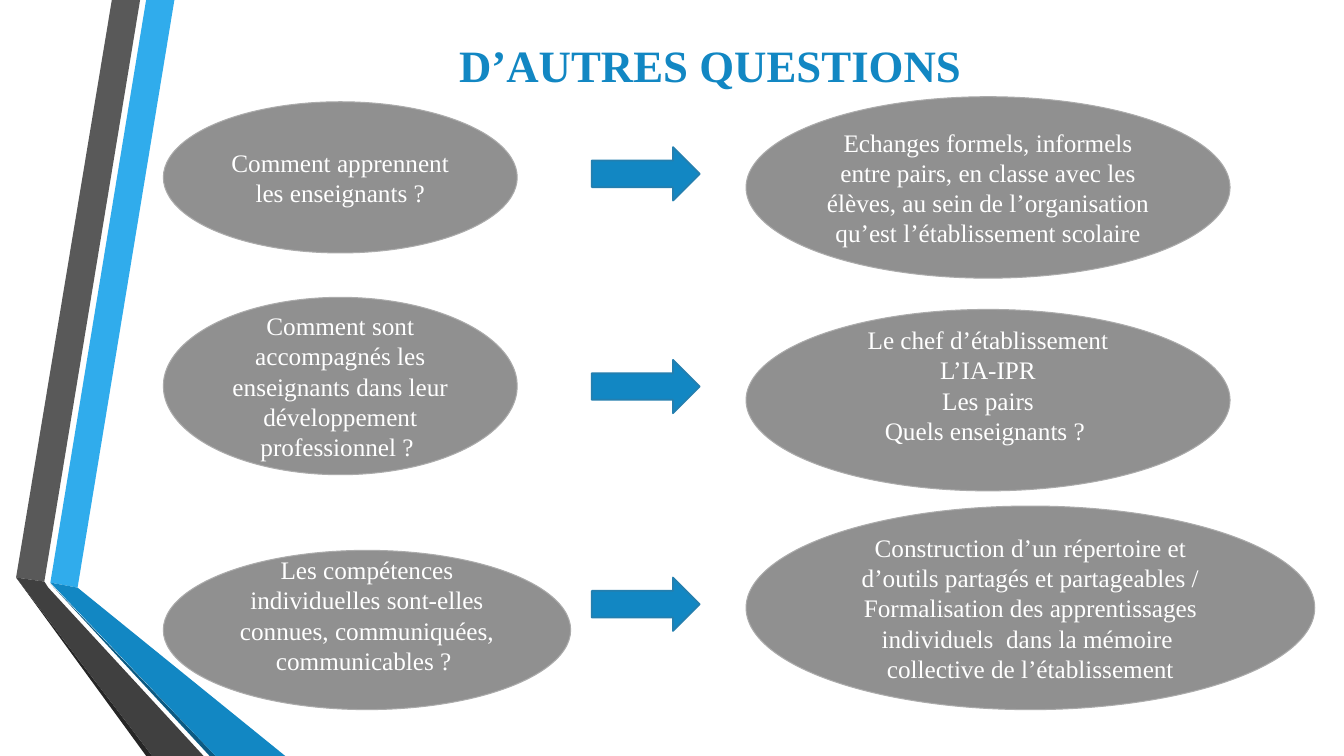
from pptx import Presentation
from pptx.dml.color import RGBColor
from pptx.enum.shapes import MSO_SHAPE
from pptx.enum.text import MSO_ANCHOR, PP_ALIGN
from pptx.util import Inches, Pt

WHITE = RGBColor(0xFF, 0xFF, 0xFF)
BLUE = RGBColor(0x12, 0x87, 0xC3)
BLUE_EDGE = RGBColor(0x24, 0x7F, 0xAF)
BLUE_LIGHT = RGBColor(0x30, 0xAC, 0xEC)
BLUE_DARK = RGBColor(0x0C, 0x5A, 0x82)
GREY = RGBColor(0x90, 0x90, 0x90)
GREY_EDGE = RGBColor(0xAB, 0xAB, 0xAB)
CHARCOAL = RGBColor(0x59, 0x59, 0x59)
CHARCOAL_DARK = RGBColor(0x40, 0x40, 0x40)
BLACK_SOFT = RGBColor(0x26, 0x26, 0x26)

TITLE_FONT = {"name": "Times New Roman", "size": Pt(32), "bold": True}
BODY_FONT = {"name": "Times New Roman", "size": Pt(18)}

# Ribbon down the left edge: colour and outline
RIBBON = [
    (BLUE_LIGHT, [(0.5, 5.78), (0.77, 5.83), (1.73, 0), (1.45, 0)]),
    (CHARCOAL, [(1.39, 0), (1.11, 0), (0.16, 5.73), (0.44, 5.77)]),
    (BLACK_SOFT, [(0.16, 5.73), (1.45, 7.5), (1.51, 7.5)]),
    (BLUE_DARK, [(0.5, 5.79), (2.08, 7.5), (2.14, 7.5)]),
    (BLUE, [(0.5, 5.78), (2.14, 7.5), (2.83, 7.5), (0.77, 5.83)]),
    (CHARCOAL_DARK, [(2.02, 7.5), (0.48, 5.83), (0.44, 5.77),
                     (0.16, 5.73), (1.51, 7.5)]),
]

LEFT_X, ARROW_X, RIGHT_X = 1.62, 5.87, 7.4

# Each row: question, arrow top, answer
# Ellipses: top, width, height, bottom inset, paragraphs
ROWS = [
    ((1.01, 3.51, 1.5, 0.05, ["Comment apprennent les enseignants ?"]),
     1.46,
     (0.96, 4.8, 1.8, 0.05,
      ["Echanges formels, informels entre pairs, en classe avec les élèves, "
       "au sein de l’organisation qu’est l’établissement scolaire"])),
    ((2.95, 3.51, 1.76, 0.05,
      ["Comment sont accompagnés les enseignants dans leur développement "
       "professionnel ? "]),
     3.57,
     (3.07, 4.8, 1.8, 0.35,
      ["Le chef d’établissement", "L’IA-IPR", "Les pairs",
       "Quels enseignants ? "])),
    ((5.46, 4.04, 1.58, 0.35,
      ["Les compétences individuelles sont-elles connues, communiquées, "
       "communicables ? "]),
     5.73,
     (5.02, 5.64, 2.02, 0.05,
      ["Construction d’un répertoire et d’outils partagés et partageables / "
       "Formalisation des apprentissages individuels  dans la mémoire ",
       "collective de l’établissement"])),
]


class SlideBuilder:
    def __init__(self, slide):
        self.shapes = slide.shapes

    def paint(self, sp, fill, edge=None, width=0):
        sp.shadow.inherit = False
        sp.fill.solid()
        sp.fill.fore_color.rgb = fill
        if edge is None:
            sp.line.fill.background()
        else:
            sp.line.color.rgb = edge
            sp.line.width = Pt(width)

    def set_text(self, sp, paragraphs, font, color, bottom=0.05):
        tf = sp.text_frame
        frame = {"word_wrap": True, "vertical_anchor": MSO_ANCHOR.MIDDLE,
                 "margin_bottom": Inches(bottom)}
        for key, value in frame.items():
            setattr(tf, key, value)
        for i, text in enumerate(paragraphs):
            p = tf.add_paragraph() if i else tf.paragraphs[0]
            p.alignment = PP_ALIGN.CENTER
            r = p.add_run()
            r.text = text
            for key, value in font.items():
                setattr(r.font, key, value)
            r.font.color.rgb = color

    def band(self, color, points):
        corners = [(Inches(x), Inches(y)) for x, y in points]
        outline = self.shapes.build_freeform(*corners[0])
        outline.add_line_segments(corners[1:], close=True)
        self.paint(outline.convert_to_shape(), color)

    def title(self, text, *box):
        sp = self.shapes.add_textbox(*map(Inches, box))
        self.set_text(sp, [text], TITLE_FONT, BLUE)

    def ellipse(self, left, top, width, height, bottom, paragraphs):
        box = map(Inches, (left, top, width, height))
        sp = self.shapes.add_shape(MSO_SHAPE.OVAL, *box)
        self.paint(sp, GREY, GREY_EDGE, 0.75)
        self.set_text(sp, paragraphs, BODY_FONT, WHITE, bottom)

    def arrow(self, left, top):
        box = map(Inches, (left, top, 1.07, 0.53))
        sp = self.shapes.add_shape(MSO_SHAPE.RIGHT_ARROW, *box)
        self.paint(sp, BLUE, BLUE_EDGE, 1.25)


def main():
    prs = Presentation()
    prs.slide_width, prs.slide_height = Inches(13.33), Inches(7.5)
    s = SlideBuilder(prs.slides.add_slide(prs.slide_layouts[6]))

    # Ribbon and title
    for color, points in RIBBON:
        s.band(color, points)
    s.title("D’AUTRES QUESTIONS ", 1.62, 0.17, 10.96, 0.94)

    # Questions leading to answers
    for question, arrow_top, answer in ROWS:
        s.ellipse(LEFT_X, *question)
        s.arrow(ARROW_X, arrow_top)
        s.ellipse(RIGHT_X, *answer)

    prs.save("out.pptx")


if __name__ == "__main__":
    main()
